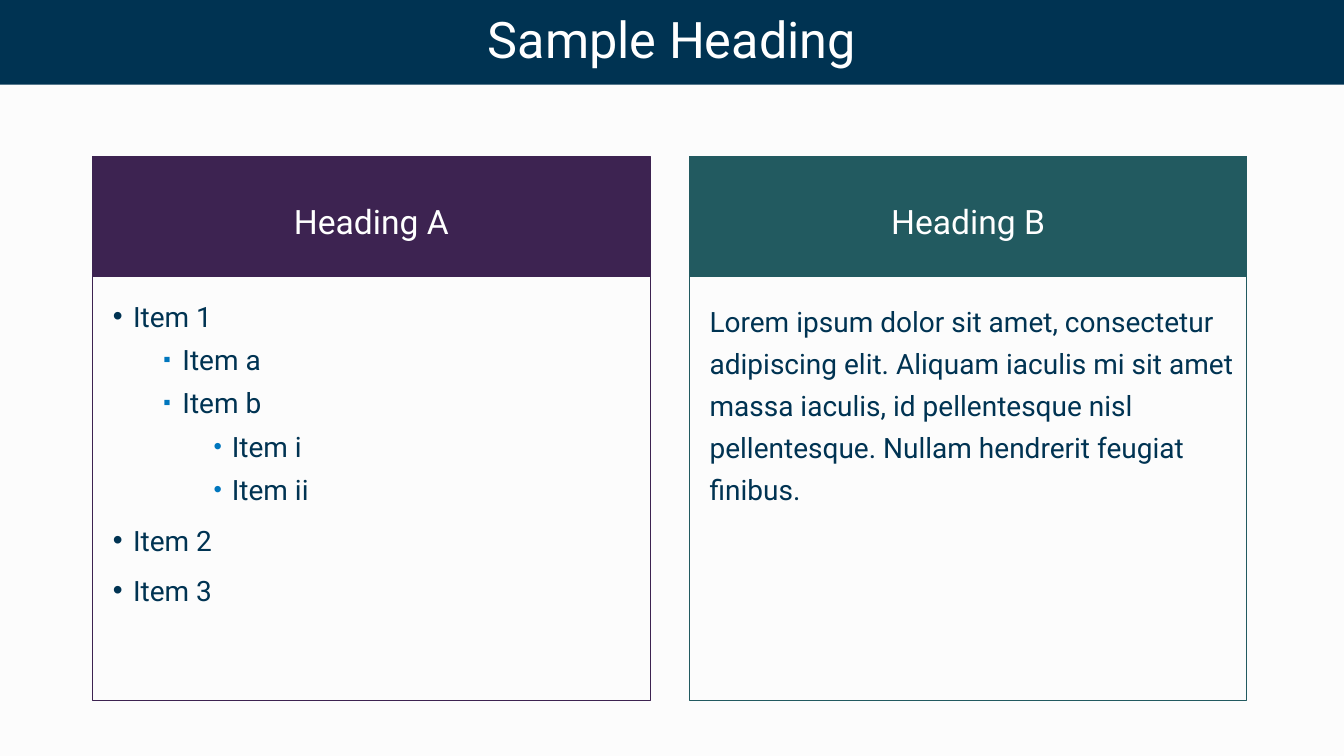
from dataclasses import dataclass

from lxml import etree
from pptx import Presentation
from pptx.dml.color import RGBColor
from pptx.enum.shapes import MSO_SHAPE
from pptx.enum.text import MSO_ANCHOR, PP_ALIGN
from pptx.oxml.ns import qn
from pptx.util import Pt

RECT = MSO_SHAPE.RECTANGLE
TOP, MIDDLE = MSO_ANCHOR.TOP, MSO_ANCHOR.MIDDLE
LEFT, CENTER = PP_ALIGN.LEFT, PP_ALIGN.CENTER


@dataclass(frozen=True)
class Theme:
    font: str = "Roboto"
    page: str = "FCFCFC"
    navy: str = "003352"
    purple: str = "3D2351"
    teal: str = "225A60"
    blue: str = "0076BD"
    white: str = "FFFFFF"
    title: int = 36
    head: int = 24
    body: int = 20


def apply(target, values):
    for name, value in values.items():
        setattr(target, name, value)


class Deck:
    def __init__(self, theme):
        self.theme = theme
        self.file = Presentation()
        apply(self.file, {"slide_width": Pt(960), "slide_height": Pt(540)})
        self.slide = self.file.slides.add_slide(self.file.slide_layouts[6])
        self.paint(self.slide.background.fill, theme.page)

    def paint(self, fill, color):
        fill.solid()
        fill.fore_color.rgb = RGBColor.from_string(color)

    def box(self, place, fill=None, line=None, anchor=MIDDLE, inset=(7.2, 3.6, 7.2, 3.6)):
        shape = self.slide.shapes.add_shape(RECT, *map(Pt, place))
        shape.shadow.inherit = False
        if fill:
            self.paint(shape.fill, fill)
        else:
            shape.fill.background()
        if line:
            self.paint(shape.line.fill, line)
            shape.line.width = Pt(0.75)
        else:
            shape.line.fill.background()
        sides = ("margin_left", "margin_top", "margin_right", "margin_bottom")
        frame = shape.text_frame
        apply(frame, dict(zip(sides, map(Pt, inset))))
        apply(frame, {"word_wrap": True, "vertical_anchor": anchor})
        return frame

    def bullet(self, para, level):
        left, hang, mark, size, color = BULLETS[level]
        props = para._p.get_or_add_pPr()
        props.set("marL", str(Pt(left)))
        props.set("indent", str(-Pt(hang)))
        paint = etree.SubElement(props, qn("a:buClr"))
        etree.SubElement(paint, qn("a:srgbClr"), val=color)
        etree.SubElement(props, qn("a:buSzPct"), val=str(size * 1000))
        etree.SubElement(props, qn("a:buFont"), typeface="Arial")
        etree.SubElement(props, qn("a:buChar"), char=mark)

    def text(self, para, words, size, color, spacing, align=LEFT, before=0, level=None):
        if level is not None:
            self.bullet(para, level)
        apply(para, {"alignment": align, "line_spacing": spacing,
                     "space_before": Pt(before), "level": level or 0})
        run = para.add_run()
        run.text = words
        apply(run.font, {"name": self.theme.font, "size": Pt(size)})
        run.font.color.rgb = RGBColor.from_string(color)

    def title(self, words):
        frame = self.box((0, 0, 960, 60.48), self.theme.navy)
        self.text(frame.paragraphs[0], words, self.theme.title, self.theme.white, 0.9, CENTER)

    def panel(self, left, color, head, items, spacing):
        frame = self.box((left, HEAD_TOP, WIDTH, HEAD_TALL), color, color,
                         inset=(7.2, 8.64, 7.2, 3.6))
        self.text(frame.paragraphs[0], head, self.theme.head, self.theme.white, Pt(30), CENTER)
        frame = self.box((left, HEAD_TOP + HEAD_TALL, WIDTH, BODY_TALL), None, color,
                         TOP, (14.4, 14.4, 7.2, 3.6))
        for index, (level, words) in enumerate(items):
            para = frame.add_paragraph() if index else frame.paragraphs[0]
            before = (5 if level else 10) if index else 0
            self.text(para, words, self.theme.body, self.theme.navy, Pt(spacing),
                      before=before, level=level)


THEME = Theme()
BULLETS = [
    (14.4, 14.4, "•", 100, THEME.navy),
    (49.68, 13.68, "▪", 75, THEME.blue),
    (84.96, 12.96, "•", 85, THEME.blue),
]
HEAD_TOP, HEAD_TALL, BODY_TALL = 111.6, 85.68, 303.12
START, WIDTH, GAP = 66.24, 398.16, 28.08
ITEMS = [(0, "Item 1"), (1, "Item a"), (1, "Item b"), (2, "Item i"),
         (2, "Item ii"), (0, "Item 2"), (0, "Item 3")]
LOREM = ("Lorem ipsum dolor sit amet, consectetur adipiscing elit. "
         "Aliquam iaculis mi sit amet massa iaculis, id pellentesque nisl "
         "pellentesque. Nullam hendrerit feugiat finibus.")
PANELS = [
    (THEME.purple, "Heading A", ITEMS, 26),
    (THEME.teal, "Heading B", [(None, LOREM)], 30),
]


def main():
    deck = Deck(THEME)
    deck.title("Sample Heading")
    for index, panel in enumerate(PANELS):
        deck.panel(START + index * (WIDTH + GAP), *panel)
    deck.file.save("out.pptx")


if __name__ == "__main__":
    main()
